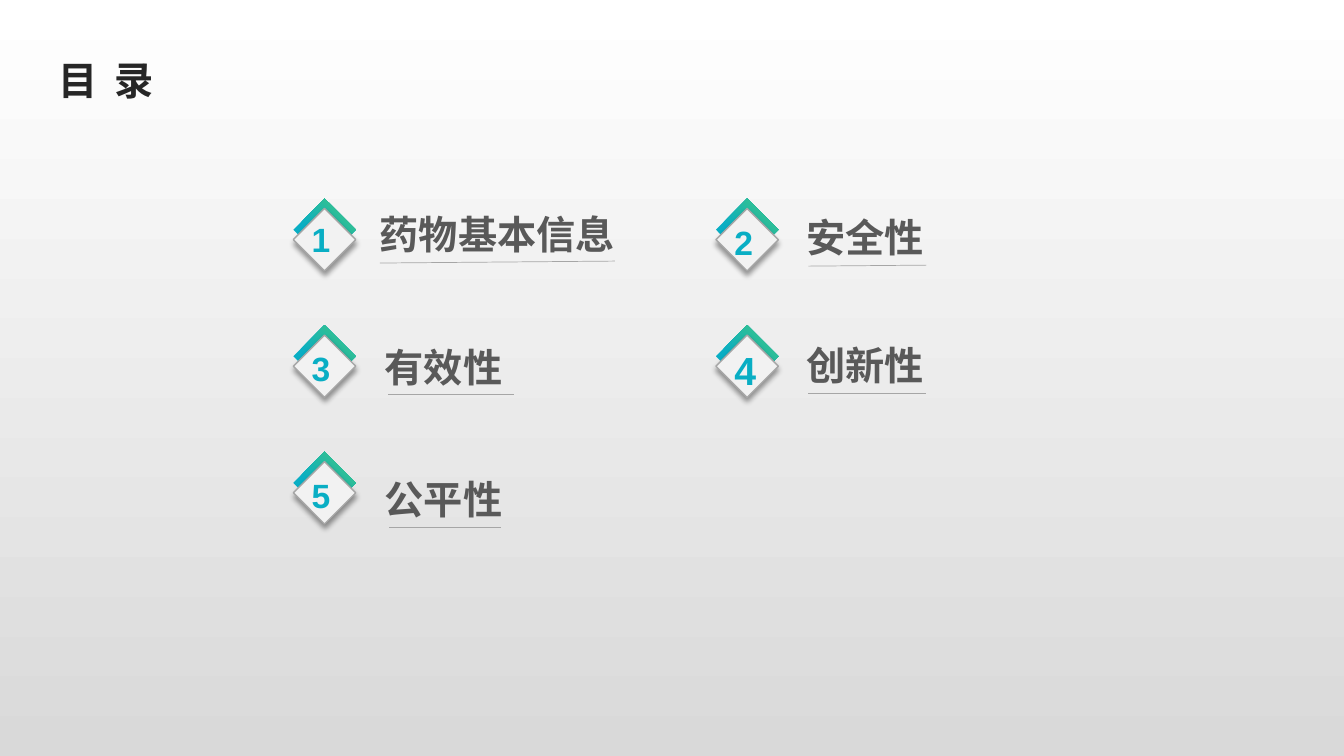
from dataclasses import dataclass

from lxml import etree
from pptx import Presentation
from pptx.dml.color import RGBColor
from pptx.enum.shapes import MSO_CONNECTOR, MSO_SHAPE
from pptx.enum.text import MSO_ANCHOR, MSO_AUTO_SIZE, PP_ALIGN
from pptx.oxml import parse_xml
from pptx.oxml.ns import qn
from pptx.util import Pt

DIAMOND = MSO_SHAPE.FLOWCHART_DECISION
STRAIGHT = MSO_CONNECTOR.STRAIGHT
MIDDLE = MSO_ANCHOR.MIDDLE
CENTER = PP_ALIGN.CENTER
GROW = MSO_AUTO_SIZE.SHAPE_TO_FIT_TEXT
NS_A = "http://schemas.openxmlformats.org/drawingml/2006/main"


@dataclass(frozen=True)
class Theme:
    latin: str = "Arial"
    cjk: str = "Noto Sans CJK SC"
    title: str = "262626"
    label: str = "595959"
    accent: str = "09AEC4"
    accent_end: str = "45C87C"
    face: str = "F2F2F2"
    line: str = "A6A6A6"
    bg_top: str = "FFFFFF"
    bg_bottom: str = "D9D9D9"
    shadow: str = "000000"
    heading_size: float = 28
    number_size: float = 24


@dataclass(frozen=True)
class Entry:
    number: str
    label: str
    col: int
    row: int
    number_top: float
    label_at: tuple[float, float]
    rule_start: tuple[float, float]
    rule_end: tuple[float, float]
    number_size: float = Theme.number_size


THEME = Theme()
ICON_SIZE = 44.6
FACE_DROP = 7.1
NUMBER_INDENT = 6.1
COLUMN_LEFTS = (209.5, 511.4)
FIRST_ROW_TOP = 141.8
ROW_PITCH = 90.4

ENTRIES = [
    Entry("1", "药物基本信息", 0, 0, 152.6, (264.2, 146.9), (271.4, 187.9), (439.2, 186.5)),
    Entry("3", "有效性", 0, 1, 244.8, (267.8, 241.9), (277.2, 281.5), (367.2, 281.5)),
    Entry("5", "公平性", 0, 2, 335.5, (267.8, 336.2), (277.9, 376.6), (357.8, 376.6)),
    Entry("2", "安全性", 1, 0, 154.8, (568.8, 149), (577.4, 190.1), (661.7, 189.4)),
    Entry("4", "创新性", 1, 1, 244.1, (568.8, 240.5), (577.4, 280.8), (661.7, 280.8),
          THEME.heading_size),
]


def rgb(value: str) -> RGBColor:
    return RGBColor.from_string(value)


def set_gradient(fill, stops: list[tuple[float, str]], angle: float) -> None:
    fill.gradient()
    fill.gradient_angle = angle
    for stop, (position, color) in zip(fill.gradient_stops, stops):
        stop.position = position
        stop.color.rgb = rgb(color)


def add_text(shapes, text: str, left: float, top: float, width: float, height: float,
             size: float, color: str, font: str):
    s = shapes.add_textbox(Pt(left), Pt(top), Pt(width), Pt(height))
    tf = s.text_frame
    tf.text = text
    tf.word_wrap = False
    tf.auto_size = GROW
    r = tf.paragraphs[0].runs[0]
    r.font.size = Pt(size)
    r.font.bold = True
    r.font.color.rgb = rgb(color)
    r.font.name = font
    # East Asian typeface
    etree.SubElement(r.font._element, qn("a:ea"), typeface=THEME.cjk)
    return s


def add_title(shapes) -> None:
    s = add_text(shapes, "目 录", 20.9, 28.8, 110.2, 56.2,
                 THEME.heading_size, THEME.title, THEME.latin)
    tf = s.text_frame
    tf.auto_size = MSO_AUTO_SIZE.NONE
    tf.word_wrap = True
    tf.vertical_anchor = MIDDLE
    p = tf.paragraphs[0]
    p.alignment = CENTER
    p.runs[0].font._element.set("spc", "300")


def add_rule(shapes, start: tuple[float, float], end: tuple[float, float]) -> None:
    rule = shapes.add_connector(STRAIGHT, *map(Pt, start), *map(Pt, end))
    rule.line.color.rgb = rgb(THEME.line)
    rule.line.width = Pt(0.5)
    etree.SubElement(rule._element.spPr, qn("a:effectLst"))


def add_diamond(shapes, left: float, top: float):
    s = shapes.add_shape(DIAMOND, Pt(left), Pt(top), Pt(ICON_SIZE), Pt(ICON_SIZE))
    s.shadow.inherit = False
    return s


def add_drop_shadow(s) -> None:
    effects = s._element.spPr.find(qn("a:effectLst"))
    effects.append(parse_xml(
        f'<a:outerShdw xmlns:a="{NS_A}" blurRad="{Pt(4)}" dist="{Pt(3)}" '
        f'dir="5400000" algn="t" rotWithShape="0"><a:srgbClr val="{THEME.shadow}">'
        '<a:alpha val="40000"/></a:srgbClr></a:outerShdw>'))


def add_badge(shapes, entry: Entry) -> None:
    badge = shapes.add_group_shape().shapes
    left = COLUMN_LEFTS[entry.col]
    top = FIRST_ROW_TOP + entry.row * ROW_PITCH

    # Coloured diamond behind
    back = add_diamond(badge, left, top)
    set_gradient(back.fill, [(0.35, THEME.accent), (1, THEME.accent_end)], 45)
    back.line.fill.background()

    # Pale diamond in front
    face = add_diamond(badge, left, top + FACE_DROP)
    face.fill.solid()
    face.fill.fore_color.rgb = rgb(THEME.face)
    face.line.color.rgb = rgb(THEME.line)
    face.line.width = Pt(1)
    add_drop_shadow(face)

    # Number
    add_text(badge, entry.number, left + NUMBER_INDENT, entry.number_top,
             entry.number_size * 0.56 + 14.4, entry.number_size * 1.2 + 7.2,
             entry.number_size, THEME.accent, THEME.latin)


def add_entry(shapes, entry: Entry) -> None:
    width = len(entry.label) * THEME.heading_size + 15.4
    add_text(shapes, entry.label, *entry.label_at, width, 41,
             THEME.heading_size, THEME.label, THEME.cjk)
    add_rule(shapes, entry.rule_start, entry.rule_end)
    add_badge(shapes, entry)


def main() -> None:
    prs = Presentation()
    prs.slide_width, prs.slide_height = Pt(960), Pt(540)
    slide = prs.slides.add_slide(prs.slide_layouts[6])

    # Background
    set_gradient(slide.background.fill, [(0, THEME.bg_top), (1, THEME.bg_bottom)], 270)

    # Title and contents
    add_title(slide.shapes)
    for entry in ENTRIES:
        add_entry(slide.shapes, entry)

    prs.save("out.pptx")


if __name__ == "__main__":
    main()
